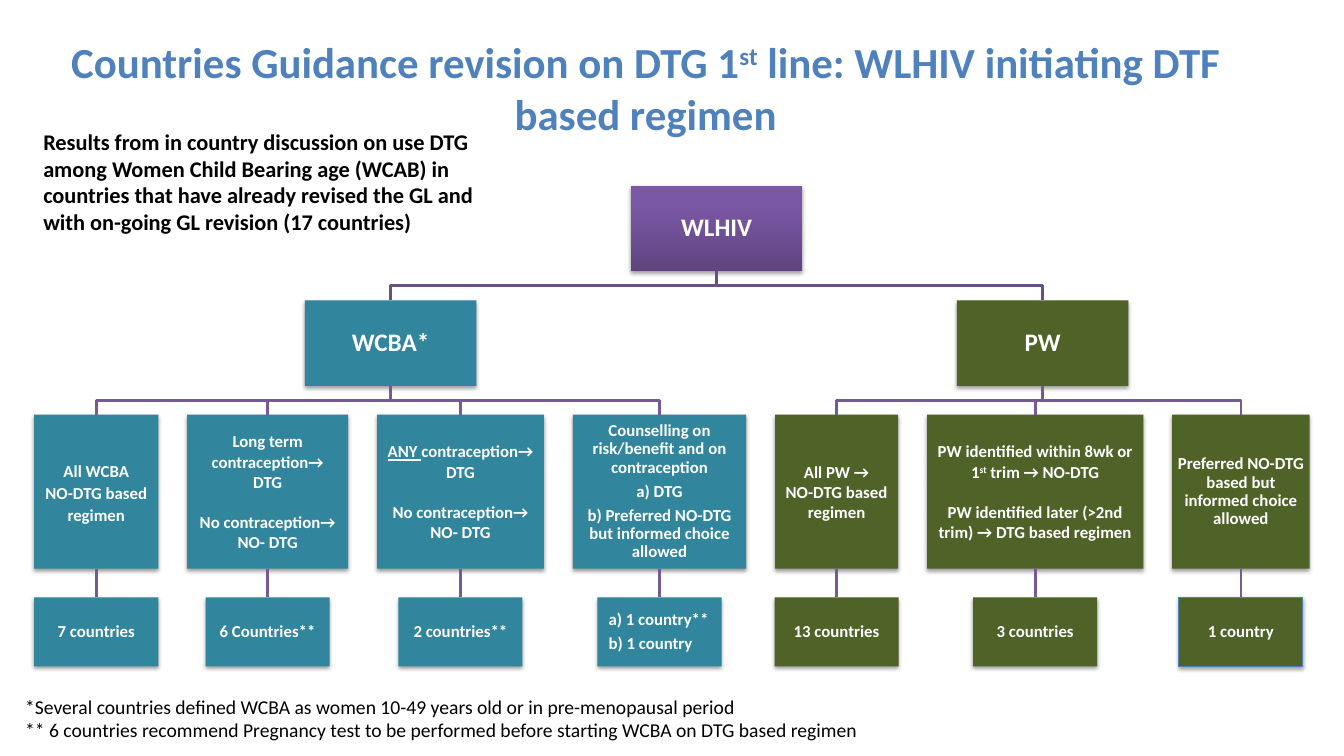
"""Build a slide with a decision tree of country guidance on DTG."""
from dataclasses import dataclass

from lxml import etree
from pptx import Presentation
from pptx.dml.color import RGBColor as Rgb
from pptx.enum import shapes as kinds, text as t
from pptx.oxml import ns
from pptx.util import Pt


@dataclass(frozen=True)
class Theme:
    """Hold the colours, font and type sizes."""
    font: str = "Calibri"
    blue: Rgb = Rgb.from_string("4F81BD")
    teal: Rgb = Rgb.from_string("31859C")
    green: Rgb = Rgb.from_string("4F6228")
    dark: Rgb = Rgb.from_string("5F4480")
    light: Rgb = Rgb.from_string("7B58A6")
    trunk: Rgb = Rgb.from_string("675082")
    branch: Rgb = Rgb.from_string("745B93")
    white: Rgb = Rgb.from_string("FFFFFF")
    black: Rgb = Rgb.from_string("000000")
    title: float = 30.6
    head: float = 18
    intro: float = 16
    note: float = 14
    body: float = 12


THEME = Theme()
GAP = 20.6
HEAD_W, HEAD_H = 122.6, 61.1
COUNT_W, COUNT_H = 88.6, 49.2
LEAF_H = 110
ROOT_Y = 132.8
HEAD_Y = ROOT_Y + HEAD_H + GAP
LEAF_Y = HEAD_Y + HEAD_H + GAP
COUNT_Y = LEAF_Y + LEAF_H + GAP

PAD = (5.8, 2.9)
SNUG = (0.7, 0.7)
TIGHT = dict(line=0.9, after=4.2)
SPLIT = dict(before=14.6, inset=PAD)

WCBA = [
    (88.6, ["All WCBA", "NO-DTG based regimen"], dict(line=1.1, inset=PAD),
     ["7 countries"], {}),
    (115, ["Long term contraception→ DTG", "No contraception→ NO- DTG"], SPLIT,
     ["6 Countries**"], {}),
    (119.3, [[("ANY ", "under"), ("contraception→ DTG", "")],
             "No contraception→ NO- DTG"], SPLIT,
     ["2 countries**"], {}),
    (123.8, ["Counselling on risk/benefit and on contraception", "a) DTG",
             "b) Preferred NO-DTG but informed choice allowed"],
     dict(inset=PAD, **TIGHT),
     ["a) 1 country**", "b) 1 country"],
     dict(align=t.PP_ALIGN.LEFT, inset=(7.9, 0.7))),
]
PW = [
    (88, ["All PW →", "NO-DTG based regimen"], dict(inset=PAD),
     ["13 countries"], {}),
    (154.5, [[("PW identified within 8wk or 1", ""), ("st", "super"),
              (" trim → NO-DTG", "")],
             "PW identified later (>2nd trim) → DTG based regimen"], SPLIT,
     ["3 countries"], {}),
    (98.2, ["Preferred NO-DTG based but informed choice allowed"], TIGHT,
     ["1 country"], dict(edge=THEME.blue)),
]


def write(frame, paras, *, size=THEME.body, color=THEME.white, bold=True,
          align=t.PP_ALIGN.CENTER, anchor=t.MSO_ANCHOR.MIDDLE, inset=SNUG,
          line=1.0, before=0, after=0):
    """Fill a text frame with formatted paragraphs."""
    frame.word_wrap = True
    frame.auto_size = t.MSO_AUTO_SIZE.NONE
    frame.vertical_anchor = anchor
    frame.margin_left = frame.margin_right = Pt(inset[0])
    frame.margin_top = frame.margin_bottom = Pt(inset[1])
    for i, parts in enumerate(paras):
        para = frame.add_paragraph() if i else frame.paragraphs[0]
        para.alignment = align
        para.line_spacing = line
        para.space_before = Pt(before if i else 0)
        para.space_after = Pt(after)
        for words, style in [(parts, "")] if isinstance(parts, str) else parts:
            run = para.add_run()
            run.text = words
            font = run.font
            font.name, font.size, font.bold = THEME.font, Pt(size), bold
            font.color.rgb = color
            if style == "under":
                font.underline = True
            elif style == "super":
                run._r.get_or_add_rPr().set("baseline", "30000")


def shade(shape):
    """Give a shape a soft shadow below it."""
    shape.shadow.inherit = False
    effects = shape._element.spPr.find(ns.qn("a:effectLst"))
    outer = etree.SubElement(effects, ns.qn("a:outerShdw"), blurRad=str(Pt(3.1)),
                             dist=str(Pt(1.6)), dir="5400000", rotWithShape="0")
    tint = etree.SubElement(outer, ns.qn("a:srgbClr"), val="000000")
    etree.SubElement(tint, ns.qn("a:alpha"), val="38000")


def box(slide, mid, top, width, height, paras, fill=None, edge=None, **form):
    """Add a box centred on mid; without a fill it gets the root gradient."""
    shape = slide.shapes.add_shape(kinds.MSO_SHAPE.RECTANGLE, Pt(mid - width / 2),
                                   Pt(top), Pt(width), Pt(height))
    if fill:
        shape.fill.solid()
        shape.fill.fore_color.rgb = fill
    else:
        shape.fill.gradient()
        shape.fill.gradient_angle = 90
        low, high = shape.fill.gradient_stops
        low.color.rgb, high.color.rgb = THEME.dark, THEME.light
        high.position = 0.8
    if edge:
        shape.line.color.rgb = edge
        shape.line.width = Pt(0.75)
    else:
        shape.line.fill.background()
    shade(shape)
    write(shape.text_frame, paras, **form)
    return shape


def note(slide, left, top, width, height, paras, **form):
    """Add a plain text box."""
    area = slide.shapes.add_textbox(Pt(left), Pt(top), Pt(width), Pt(height))
    write(area.text_frame, paras, color=THEME.black, align=t.PP_ALIGN.LEFT,
          anchor=t.MSO_ANCHOR.TOP, inset=(7.2, 3.6), **form)


def elbow(slide, upper, lower, color):
    """Draw a bent line from the foot of one box to the top of another."""
    start, end = (b.left + b.width // 2 for b in (upper, lower))
    foot = upper.top + upper.height
    bend = (foot + lower.top) // 2
    pen = slide.shapes.build_freeform(start, foot)
    pen.add_line_segments([(start, bend), (end, bend), (end, lower.top)], close=False)
    shape = pen.convert_to_shape()
    shape.fill.background()
    shape.line.color.rgb = color
    shape.line.width = Pt(2)
    shape.shadow.inherit = False


def link(slide, upper, lower):
    """Join two stacked boxes with a straight line."""
    wire = slide.shapes.add_connector(kinds.MSO_CONNECTOR.STRAIGHT, 0, 0, 0, 0)
    wire.begin_connect(upper, 2)
    wire.end_connect(lower, 0)
    wire.line.color.rgb = THEME.branch
    wire.line.width = Pt(2)
    etree.SubElement(wire._element.spPr, ns.qn("a:effectLst"))


def group(slide, root, name, mid, left, leaves, fill):
    """Draw one arm of the tree with its leaves and counts."""
    head = box(slide, mid, HEAD_Y, HEAD_W, HEAD_H, [name], fill,
               size=THEME.head, **TIGHT)
    elbow(slide, root, head, THEME.trunk)
    for width, paras, form, count, look in leaves:
        axis = left + width / 2
        leaf = box(slide, axis, LEAF_Y, width, LEAF_H, paras, fill, **form)
        total = box(slide, axis, COUNT_Y, COUNT_W, COUNT_H, count, fill,
                    **{**TIGHT, **look})
        elbow(slide, head, leaf, THEME.branch)
        link(slide, leaf, total)
        left += width + GAP


def main():
    """Build and save the slide."""
    deck = Presentation()
    deck.slide_width, deck.slide_height = Pt(960), Pt(540)
    slide = deck.slides.add_slide(deck.slide_layouts[5])
    title = slide.shapes.title
    title.left, title.top, title.width, title.height = map(Pt, (10.8, 20.2, 900.7, 84.2))
    write(title.text_frame,
          [[("Countries Guidance revision on DTG 1", ""), ("st", "super"),
            (" line: WLHIV initiating DTF based regimen", "")]],
          size=THEME.title, color=THEME.blue, inset=(7.2, 3.6))
    wcba, pw = 279, 744.8
    root = box(slide, (wcba + pw) / 2, ROOT_Y, HEAD_W, HEAD_H, ["WLHIV"],
               size=THEME.head, **TIGHT)
    group(slide, root, "WCBA*", wcba, 24.5, WCBA, THEME.teal)
    group(slide, root, "PW", pw, 553.6, PW, THEME.green)
    note(slide, 23.8, 87.8, 334.8, 85,
         ["Results from in country discussion on use DTG among Women Child Bearing "
          "age (WCAB) in countries that have already revised the GL and with "
          "on-going GL revision (17 countries)"], size=THEME.intro)
    note(slide, 10.8, 492.5, 637.2, 41,
         ["*Several countries defined WCBA as women 10-49 years old or in "
          "pre-menopausal period",
          "** 6 countries recommend Pregnancy test to be performed before starting "
          "WCBA on DTG based regimen"], size=THEME.note, bold=False)
    deck.save("out.pptx")


if __name__ == "__main__":
    main()
